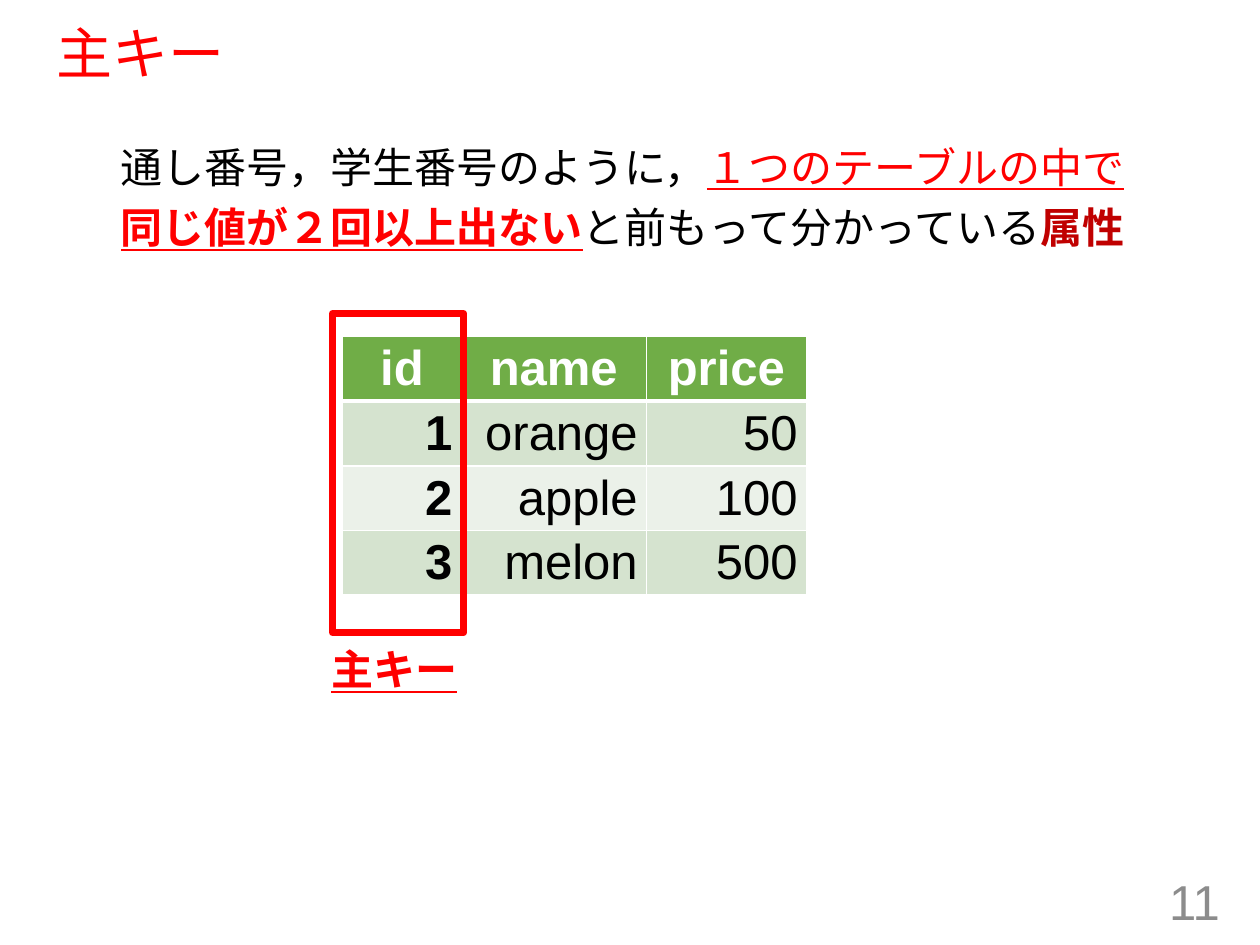
from dataclasses import dataclass, field

from lxml.etree import SubElement
from pptx import Presentation
from pptx.dml.color import RGBColor
from pptx.enum.shapes import MSO_SHAPE
from pptx.enum.text import MSO_ANCHOR, MSO_AUTO_SIZE, PP_ALIGN
from pptx.oxml.ns import qn
from pptx.util import Inches, Pt

COLORS = {
    "red": "FF0000", "dark_red": "C00000", "black": "000000", "white": "FFFFFF",
    "gray": "8C8C8C", "header": "70AD47", "odd": "D5E3CF", "even": "EBF1E9",
}
FONT = "Arial"
UNIT = Inches(0.1)  # the slide is a grid of 100 columns by 75 rows


@dataclass
class Box:
    col: float
    row: float
    cols: float
    rows: float

    def emu(self) -> tuple:
        return tuple(round(n * UNIT) for n in (self.col, self.row, self.cols, self.rows))


@dataclass
class Span:
    text: str
    color: str
    style: dict = field(default_factory=dict)


TITLE_BOX = Box(3.5, 1.9, 92.5, 5.1)
BODY_BOX = Box(8.6, 9.9, 84.5, 31.1)
TABLE_BOX = Box(27.2, 26.7, 36.8, 19.1)
KEY_FRAME = Box(26.4, 24.9, 10.4, 25.3)
KEY_LABEL = Box(25.3, 50.6, 12.1, 5)
NUMBER_BOX = Box(75.3, 69.5, 22.5, 4)

DEFINITION = [
    Span("通し番号，学生番号のように，", "black"),
    Span("１つのテーブルの中で", "red", {"underline": True}),
    Span("同じ値が２回以上出ない", "red", {"underline": True, "bold": True}),
    Span("と前もって分かっている", "black"),
    Span("属性", "dark_red", {"bold": True}),
]
PRODUCTS = [
    ("id", "name", "price"),
    ("1", "orange", "50"),
    ("2", "apple", "100"),
    ("3", "melon", "500"),
]
COLUMN_COLS = (9.4, 14.7, 12.7)
ROW_ROWS = (4.4, 4.9, 4.9, 4.9)


def rgb(name: str) -> RGBColor:
    return RGBColor.from_string(COLORS[name])


def write(tf, spans: list, size: float, para: dict) -> None:
    p = tf.paragraphs[0]
    for name, value in para.items():
        setattr(p, name, value)
    for span in spans:
        r = p.add_run()
        r.text = span.text
        for name, value in {"name": FONT, "size": Pt(size), **span.style}.items():
            setattr(r.font, name, value)
        r.font.color.rgb = rgb(span.color)


def place(sp, box: Box, frame: dict) -> None:
    sp.left, sp.top, sp.width, sp.height = box.emu()
    for name, value in {"word_wrap": True, "auto_size": MSO_AUTO_SIZE.NONE, **frame}.items():
        setattr(sp.text_frame, name, value)


def add_label(s, box: Box, span: Span, size: float, frame: dict, para: dict) -> None:
    sp = s.shapes.add_textbox(*box.emu())
    place(sp, box, frame)
    write(sp.text_frame, [span], size, para)


def set_borders(cell, bottom: float) -> None:
    """Draw white borders, with the bottom one at its own width in points."""
    tc_pr = cell._tc.get_or_add_tcPr()
    widths = {"a:lnL": 1, "a:lnR": 1, "a:lnT": 1, "a:lnB": bottom}
    for i, (tag, width) in enumerate(widths.items()):
        ln = SubElement(tc_pr, qn(tag), w=str(Pt(width)))
        fill = SubElement(ln, qn("a:solidFill"))
        SubElement(fill, qn("a:srgbClr"), val=COLORS["white"])
        tc_pr.insert(i, ln)  # borders come before the cell's fill


def add_products(s) -> None:
    table = s.shapes.add_table(len(PRODUCTS), len(COLUMN_COLS), *TABLE_BOX.emu()).table
    for column, width in zip(table.columns, COLUMN_COLS):
        column.width = round(width * UNIT)
    for i, (row, height) in enumerate(zip(table.rows, ROW_ROWS)):
        row.height = round(height * UNIT)
        header = i == 0
        fill = "header" if header else ("even", "odd")[i % 2]
        for j, cell in enumerate(row.cells):
            cell.fill.solid()
            cell.fill.fore_color.rgb = rgb(fill)
            cell.margin_left = cell.margin_right = Inches(0.07)
            cell.margin_top = cell.margin_bottom = Inches(0.04)
            span = Span(PRODUCTS[i][j], "white" if header else "black",
                        {"bold": header or j == 0})
            align = PP_ALIGN.CENTER if header else PP_ALIGN.RIGHT
            write(cell.text_frame, [span], 28, {"alignment": align})
            set_borders(cell, 3 if header or i == 0 else 1)


def add_key_frame(s) -> None:
    sp = s.shapes.add_shape(MSO_SHAPE.RECTANGLE, *KEY_FRAME.emu())
    sp.shadow.inherit = False
    sp.fill.background()
    sp.line.color.rgb = rgb("red")
    sp.line.width = Pt(4.25)


def main() -> None:
    prs = Presentation()
    prs.slide_width, prs.slide_height = 100 * UNIT, 75 * UNIT
    s = prs.slides.add_slide(prs.slide_layouts[1])
    title, body = s.shapes.title, s.placeholders[1]

    add_products(s)

    place(title, TITLE_BOX, {"vertical_anchor": MSO_ANCHOR.MIDDLE})
    write(title.text_frame, [Span("主キー", "red")], 32,
          {"alignment": PP_ALIGN.LEFT, "line_spacing": 0.9})

    place(body, BODY_BOX, {"vertical_anchor": MSO_ANCHOR.TOP})
    p_pr = body.text_frame.paragraphs[0]._p.get_or_add_pPr()
    p_pr.set("marL", "0")
    p_pr.set("indent", "0")
    SubElement(p_pr, qn("a:buNone"))
    write(body.text_frame, DEFINITION, 24, {"line_spacing": 1.2, "space_before": Pt(0)})

    add_label(s, NUMBER_BOX, Span("11", "gray"), 28,
              {"vertical_anchor": MSO_ANCHOR.MIDDLE}, {"alignment": PP_ALIGN.RIGHT})
    add_label(s, KEY_LABEL, Span("主キー", "red", {"bold": True, "underline": True}), 24,
              {"word_wrap": False}, {"alignment": PP_ALIGN.LEFT})
    add_key_frame(s)

    prs.save("out.pptx")


if __name__ == "__main__":
    main()
